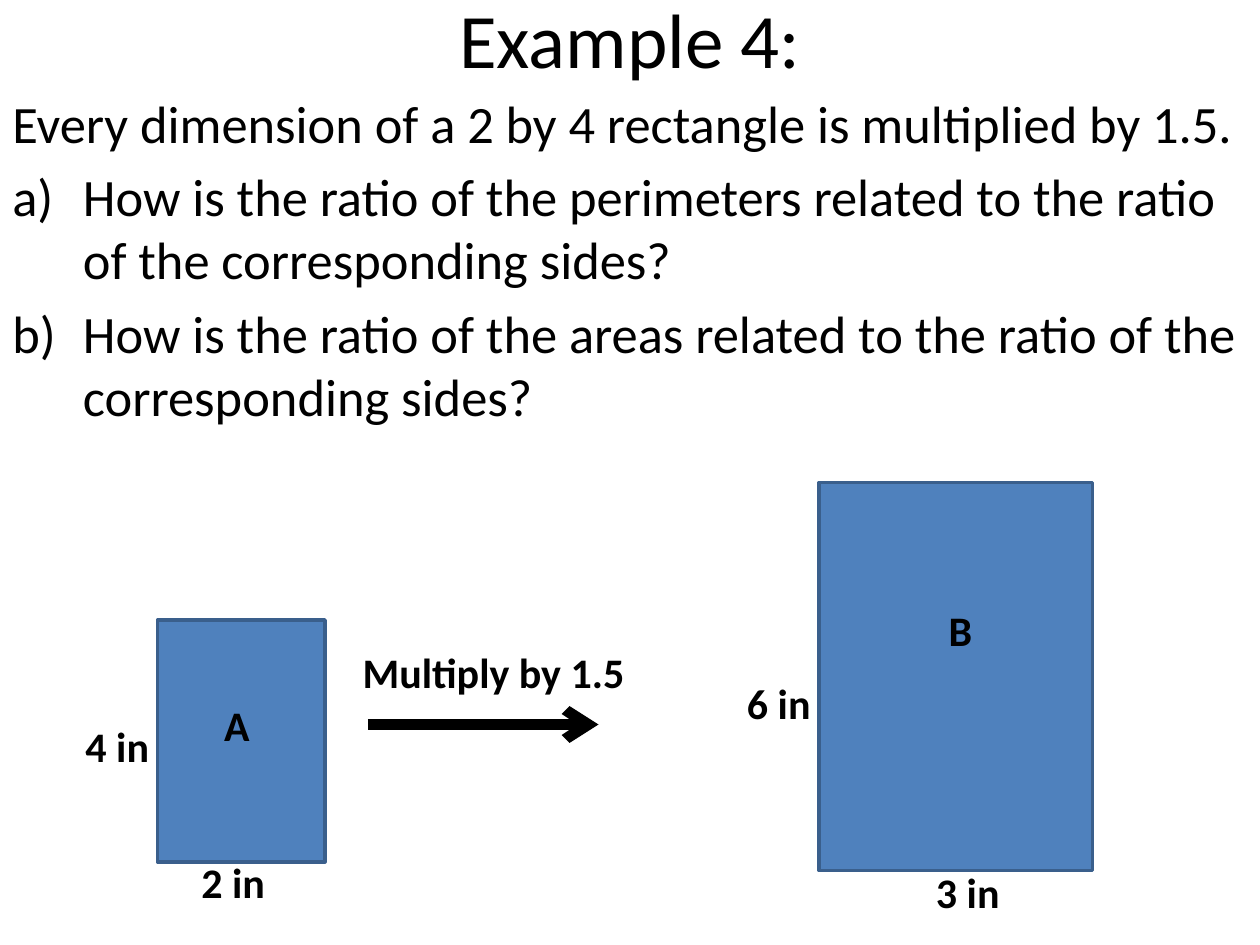
import pptx
import pptx.util
import pptx.dml.color
import pptx.enum.shapes
import pptx.enum.text
import pptx.oxml.ns
import lxml.etree

Inches = pptx.util.Inches
Pt = pptx.util.Pt
Color = pptx.dml.color.RGBColor.from_string
Align = pptx.enum.text.PP_ALIGN
Anchor = pptx.enum.text.MSO_ANCHOR
qn = pptx.oxml.ns.qn


class Theme:
    font = "Calibri"
    ink = Color("000000")
    fill = Color("4F81BD")
    edge = Color("3A5F8C")
    title = Pt(44)
    body = Pt(30)
    label = Pt(24)


deck = pptx.Presentation()
deck.slide_width, deck.slide_height = Inches(10), Inches(7.5)
slide = deck.slides.add_slide(deck.slide_layouts[6])


def add_text(text, x, y, w, h, size=Theme.label, bold=False, wrap=False,
             align=Align.LEFT, anchor=Anchor.TOP, gap=0):
    """Add a text box with one paragraph per line and return its frame."""
    frame = slide.shapes.add_textbox(
        Inches(x), Inches(y), Inches(w), Inches(h)).text_frame
    frame.word_wrap = wrap
    frame.vertical_anchor = anchor
    frame.text = text
    for para in frame.paragraphs:
        para.alignment = align
        para.space_before = Pt(gap)
        for run in para.runs:
            run.font.name = Theme.font
            run.font.size = size
            run.font.bold = bold
            run.font.color.rgb = Theme.ink
    return frame


# Title
add_text("Example 4:", 0.5, -0.33, 9, 1.25, size=Theme.title, wrap=True,
         align=Align.CENTER, anchor=Anchor.MIDDLE)

# Problem, with its two lettered questions
body = add_text(
    "Every dimension of a 2 by 4 rectangle is multiplied by 1.5.\n"
    "How is the ratio of the perimeters related to the ratio of the "
    "corresponding sides?\n"
    "How is the ratio of the areas related to the ratio of the "
    "corresponding sides?",
    0, 0.67, 10, 6.03, size=Theme.body, wrap=True, gap=6)
for para in body.paragraphs[1:]:
    props = para._p.get_or_add_pPr()
    props.set("marL", str(Inches(0.56)))
    props.set("indent", str(Inches(-0.56)))
    mark = lxml.etree.SubElement(props, qn("a:buAutoNum"))
    mark.set("type", "alphaLcParenR")

# Rectangles A and B
for x, y, w, h in [(1.25, 4.92, 1.33, 1.92), (6.5, 3.83, 2.17, 3.08)]:
    rect = slide.shapes.add_shape(
        pptx.enum.shapes.MSO_SHAPE.RECTANGLE,
        Inches(x), Inches(y), Inches(w), Inches(h))
    rect.shadow.inherit = False
    rect.fill.solid()
    rect.fill.fore_color.rgb = Theme.fill
    rect.line.color.rgb = Theme.edge
    rect.line.width = Pt(2)

# Arrow from A to B
arrow = slide.shapes.add_connector(
    pptx.enum.shapes.MSO_CONNECTOR.STRAIGHT,
    Inches(2.92), Inches(5.75), Inches(4.75), Inches(5.75))
arrow.line.color.rgb = Theme.ink
arrow.line.width = Pt(6)
tip = lxml.etree.SubElement(arrow.line._get_or_add_ln(), qn("a:tailEnd"))
tip.set("type", "arrow")
lxml.etree.SubElement(arrow._element.spPr, qn("a:effectLst"))

# Labels
for text, x, y, w in [
    ("2 in", 1.5, 6.75, 0.71),
    ("4 in", 0.58, 5.67, 0.71),
    ("Multiply by 1.5", 2.78, 5.08, 2.3),
    ("3 in", 7.33, 6.83, 0.71),
    ("6 in", 5.83, 5.33, 0.71),
    ("A", 1.68, 5.5, 0.41),
    ("B", 7.43, 4.75, 0.39),
]:
    add_text(text, x, y, w, 0.5, bold=True)

deck.save("out.pptx")
